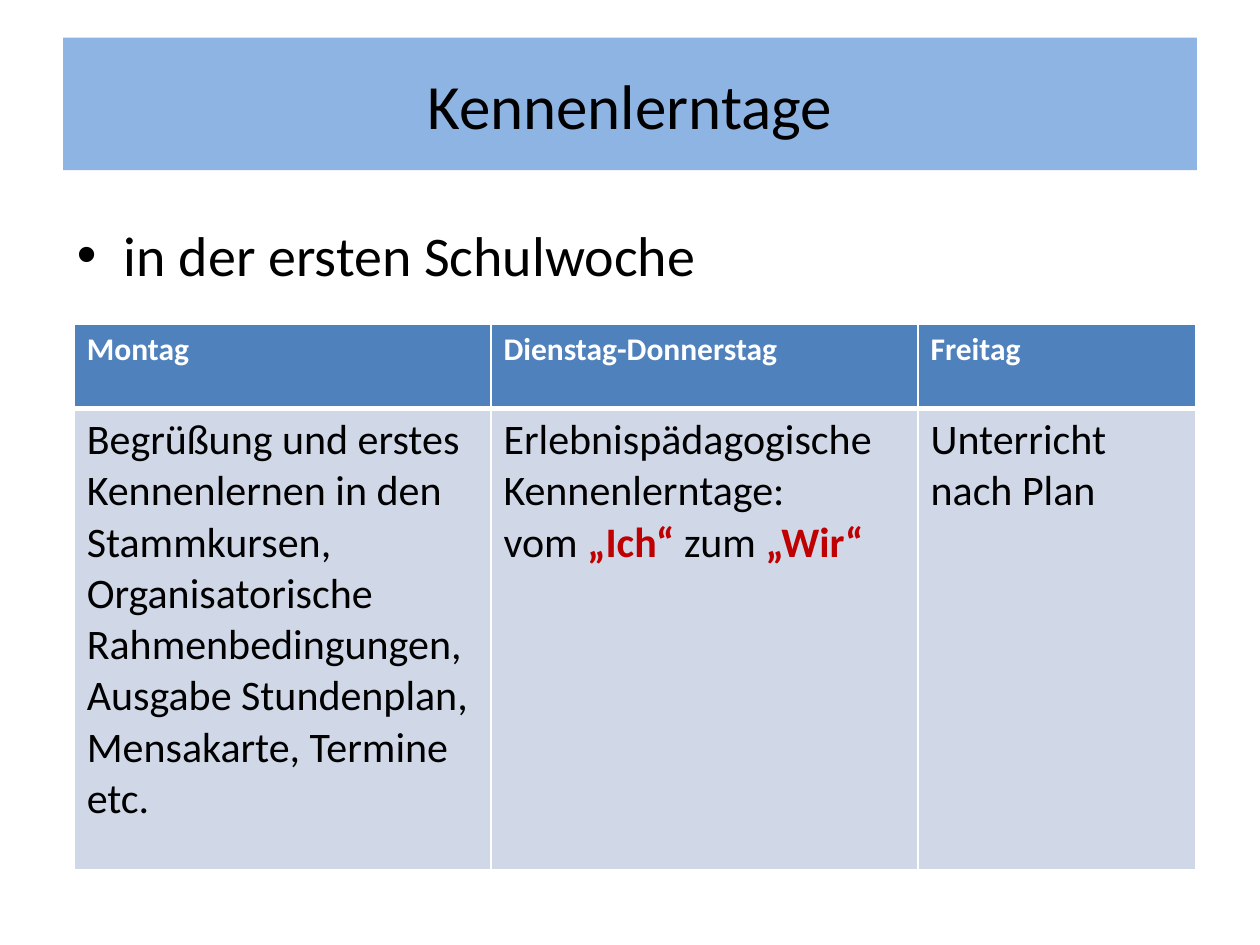
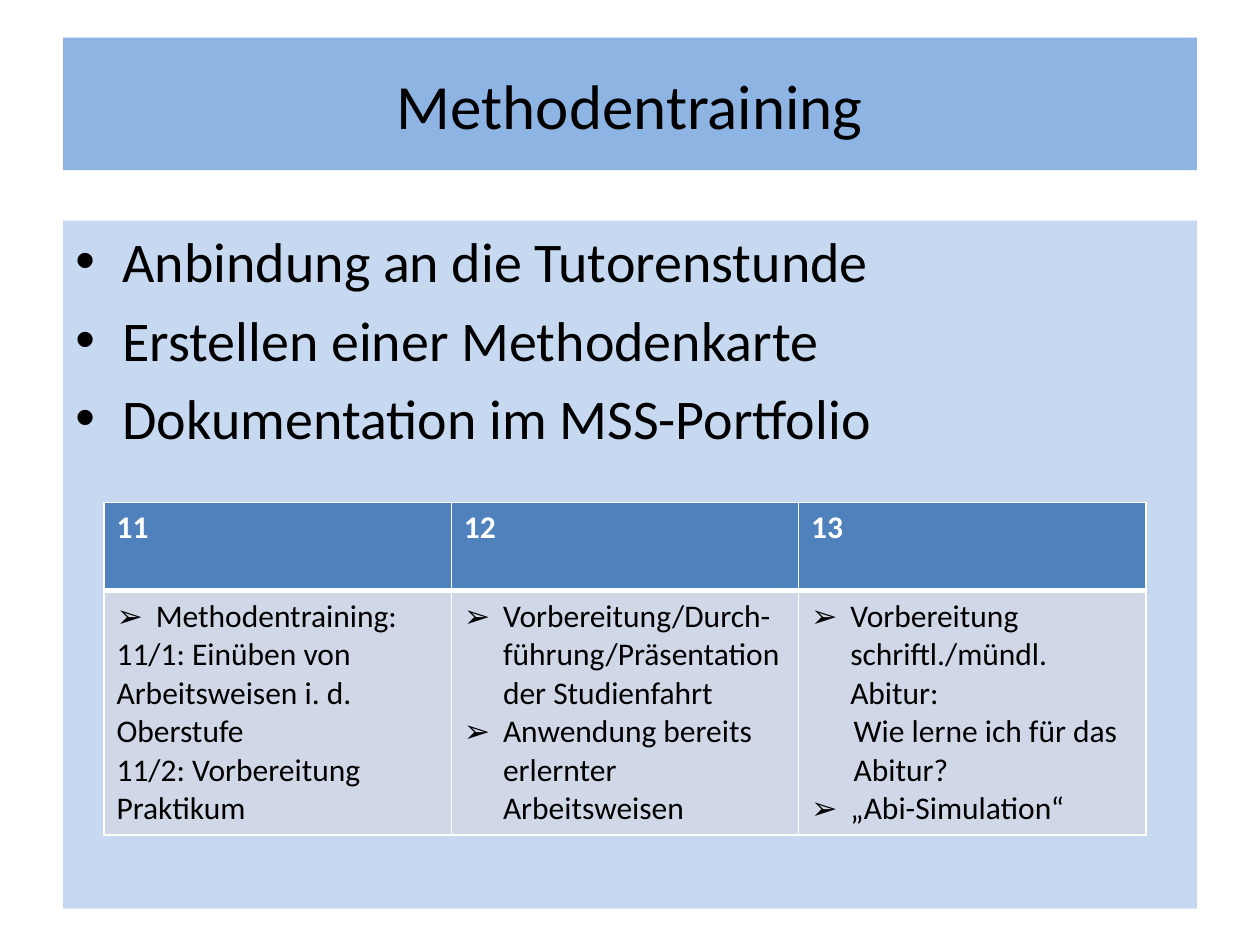
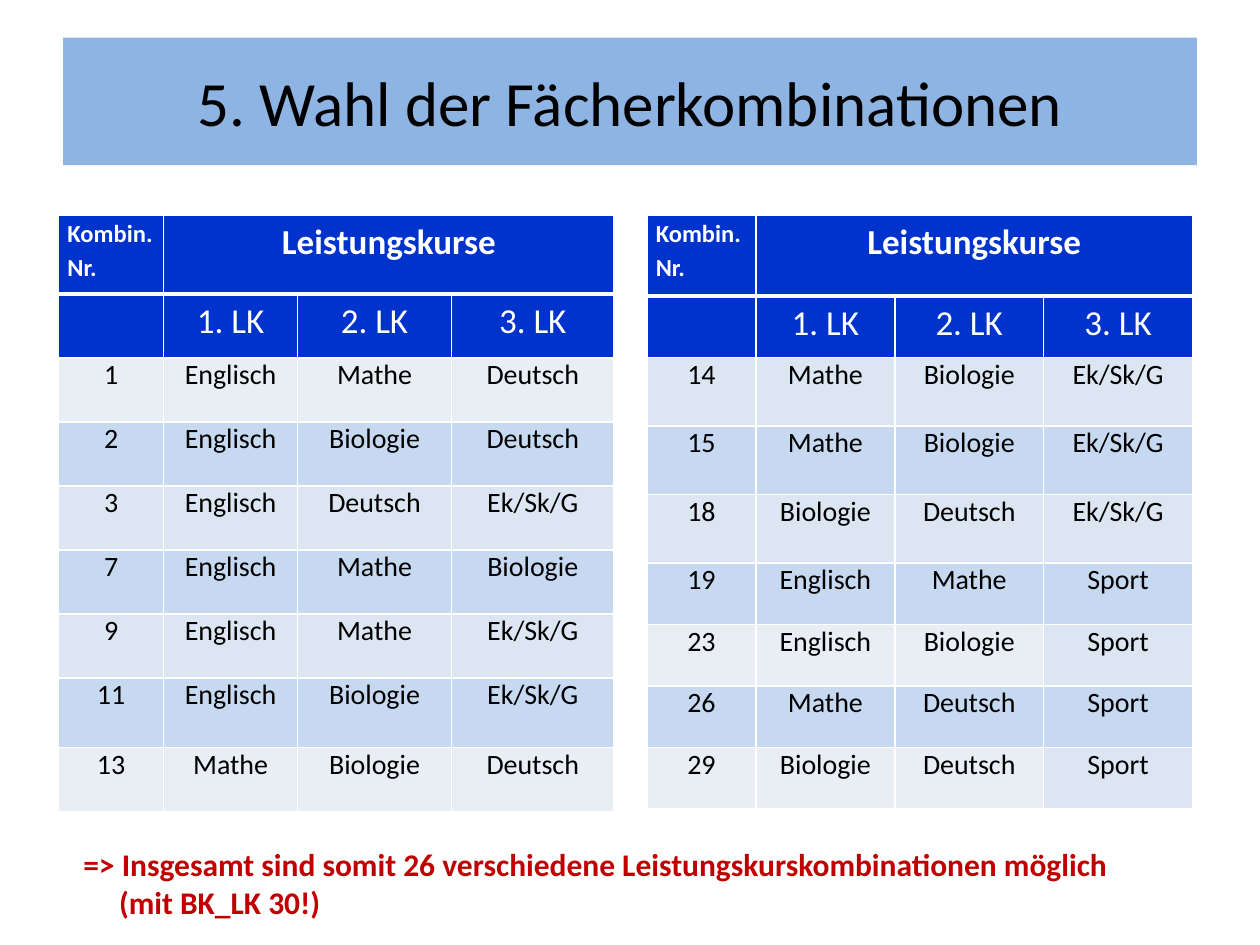
from dataclasses import dataclass

from lxml.etree import SubElement
from pptx import Presentation
from pptx.dml.color import RGBColor
from pptx.enum.text import MSO_ANCHOR, MSO_AUTO_SIZE, PP_ALIGN
from pptx.oxml.ns import qn
from pptx.util import Cm, Pt


# Theme: colours and type sizes
@dataclass(frozen=True)
class Theme:
    font: str = "Calibri"
    title_band: str = "8EB4E3"
    panel: str = "C6D9F1"
    header: str = "4F81BD"
    body_cell: str = "D0D8E8"
    course_header: str = "0033CC"
    gray: str = "E9EDF4"
    pale: str = "DCE6F2"
    white: str = "FFFFFF"
    black: str = "000000"
    accent: str = "C00000"
    title_size: float = 36
    bullet_size: float = 32
    large_size: float = 24
    course_size: float = 20
    text_size: float = 18
    entry_size: float = 16
    small_size: float = 14


THEME = Theme()


# Content types: lengths are centimetres, type sizes are points
@dataclass(frozen=True)
class Style:
    size: float
    color: str = THEME.black
    bold: bool = False
    align: PP_ALIGN = PP_ALIGN.LEFT
    line_spacing: float = 1.0
    space_before: float = 0


@dataclass(frozen=True)
class Line:
    """One paragraph; every second part between bars is accented."""
    text: str
    bullet: str = ""
    indent: float = 0


@dataclass(frozen=True)
class Cell:
    lines: list[Line]
    style: Style
    fill: str
    span: int = 1


@dataclass(frozen=True)
class Grid:
    left: float
    top: float
    columns: list[float]
    rows: list[float]
    cells: list[list[Cell]]
    margin_x: float = 0.25
    margin_y: float = 0.13


@dataclass(frozen=True)
class Combination:
    number: int
    courses: str
    fill: str
    last_fill: str = ""


BULLET_STYLE = Style(THEME.bullet_size, space_before=6.4)
HEADER_STYLE = Style(THEME.text_size, THEME.white, True)
NUMBER_STYLE = Style(THEME.small_size, THEME.white, True, line_spacing=1.15)
COURSES_STYLE = Style(THEME.course_size, THEME.white, True, PP_ALIGN.CENTER, 1.15)
COURSE_STYLE = Style(THEME.course_size, THEME.white, False, PP_ALIGN.CENTER, 1.15)
ENTRY_STYLE = Style(THEME.entry_size, align=PP_ALIGN.CENTER)
NOTE_STYLE = Style(THEME.text_size, THEME.accent, True)


# Text
def set_indent(paragraph, line: Line) -> None:
    properties = paragraph._p.get_or_add_pPr()
    properties.set("marL", str(Cm(line.indent)))
    properties.set("indent", str(-Cm(line.indent) if line.bullet else 0))
    if line.bullet:
        SubElement(properties, qn("a:buFont"), typeface="Arial")
        SubElement(properties, qn("a:buChar"), char=line.bullet)


def write_lines(text_frame, lines: list[Line], style: Style) -> None:
    for index, line in enumerate(lines):
        paragraph = text_frame.paragraphs[0] if index == 0 else text_frame.add_paragraph()
        set_indent(paragraph, line)
        paragraph.alignment = style.align
        paragraph.line_spacing = style.line_spacing
        paragraph.space_before = Pt(style.space_before)
        for position, part in enumerate(line.text.split("|")):
            accented = position % 2 == 1
            run = paragraph.add_run()
            run.text = part
            run.font.name = THEME.font
            run.font.size = Pt(style.size)
            run.font.bold = style.bold or accented
            color = THEME.accent if accented else style.color
            run.font.color.rgb = RGBColor.from_string(color)


def fill_solid(target, color: str) -> None:
    target.fill.solid()
    target.fill.fore_color.rgb = RGBColor.from_string(color)


def add_text(slide, left: float, top: float, width: float, height: float,
             lines: list[Line], style: Style, fill: str = "") -> None:
    shape = slide.shapes.add_textbox(Cm(left), Cm(top), Cm(width), Cm(height))
    shape.text_frame.word_wrap = True
    if fill:
        fill_solid(shape, fill)
    write_lines(shape.text_frame, lines, style)


def add_titled_slide(presentation, title: str, height: float = 2.67):
    slide = presentation.slides.add_slide(presentation.slide_layouts[5])
    shape = slide.shapes.title
    shape.left, shape.top, shape.width, shape.height = Cm(1.27), Cm(0.76), Cm(22.86), Cm(height)
    fill_solid(shape, THEME.title_band)
    shape.text_frame.auto_size = MSO_AUTO_SIZE.NONE
    shape.text_frame.vertical_anchor = MSO_ANCHOR.MIDDLE
    write_lines(shape.text_frame, [Line(title)], Style(THEME.title_size, align=PP_ALIGN.CENTER))
    return slide


# Tables
def set_borders(cell, top: float, bottom: float) -> None:
    properties = cell._tc.get_or_add_tcPr()
    widths = {"a:lnL": 1, "a:lnR": 1, "a:lnT": top, "a:lnB": bottom}
    for index, (tag, width) in enumerate(widths.items()):
        border = SubElement(properties, qn(tag), w=str(Pt(width)))
        solid = SubElement(border, qn("a:solidFill"))
        SubElement(solid, qn("a:srgbClr"), val=THEME.white)
        properties.insert(index, border)


def add_grid(slide, grid: Grid) -> None:
    table = slide.shapes.add_table(
        len(grid.rows), len(grid.columns), Cm(grid.left), Cm(grid.top),
        Cm(sum(grid.columns)), Cm(sum(grid.rows))).table
    table.horz_banding = False
    for column, width in zip(table.columns, grid.columns):
        column.width = Cm(width)
    for row, height in zip(table.rows, grid.rows):
        row.height = Cm(height)
    for row_index, row_cells in enumerate(grid.cells):
        column_index = 0
        for content in row_cells:
            cell = table.cell(row_index, column_index)
            last = column_index + content.span - 1
            if content.span > 1:
                cell.merge(table.cell(row_index, last))
            for index in range(column_index, last + 1):
                part = table.cell(row_index, index)
                fill_solid(part, content.fill)
                set_borders(part, 3 if row_index == 1 else 1, 3 if row_index == 0 else 1)
            cell.margin_left = cell.margin_right = Cm(grid.margin_x)
            cell.margin_top = cell.margin_bottom = Cm(grid.margin_y)
            write_lines(cell.text_frame, content.lines, content.style)
            column_index = last + 1


def plan_cells(headings: list[str], bodies: list[list[Line]], size: float) -> list[list[Cell]]:
    return [[Cell([Line(heading)], HEADER_STYLE, THEME.header) for heading in headings],
            [Cell(lines, Style(size), THEME.body_cell) for lines in bodies]]


def combination_cells(combinations: list[Combination]) -> list[list[Cell]]:
    blue = THEME.course_header
    cells = [
        [Cell([Line("Kombin."), Line("Nr.")], NUMBER_STYLE, blue),
         Cell([Line("Leistungskurse")], COURSES_STYLE, blue, span=3)],
        [Cell([], COURSE_STYLE, blue)]
        + [Cell([Line(f"{rank}. LK")], COURSE_STYLE, blue) for rank in (1, 2, 3)],
    ]
    for combination in combinations:
        texts = [str(combination.number), *combination.courses.split()]
        fills = [combination.fill] * 3 + [combination.last_fill or combination.fill]
        cells.append([Cell([Line(text)], ENTRY_STYLE, fill) for text, fill in zip(texts, fills)])
    return cells


# Slides
def bullet(text: str) -> Line:
    return Line(text, "•", 0.95)


def arrow(text: str) -> Line:
    return Line(text, "➢", 0.79)


def add_introduction_days(presentation) -> None:
    slide = add_titled_slide(presentation, "Kennenlerntage")
    add_text(slide, 1.3, 4.32, 22.86, 2.1, [bullet("in der ersten Schulwoche")], BULLET_STYLE)
    bodies = [
        [Line("Begrüßung und erstes Kennenlernen in den Stammkursen, Organisatorische "
              "Rahmenbedingungen, Ausgabe Stundenplan, Mensakarte, Termine etc.")],
        [Line("Erlebnispädagogische Kennenlerntage:"), Line("vom |„Ich“ |zum |„Wir“")],
        [Line("Unterricht nach Plan")],
    ]
    cells = plan_cells(["Montag", "Dienstag-Donnerstag", "Freitag"], bodies, THEME.large_size)
    add_grid(slide, Grid(1.5, 6.53, [8.4, 8.61, 5.59], [1.7, 9.3], cells))


def add_method_training(presentation) -> None:
    slide = add_titled_slide(presentation, "Methodentraining")
    goals = ["Anbindung an die Tutorenstunde", "Erstellen einer Methodenkarte",
             "Dokumentation im MSS-Portfolio"]
    add_text(slide, 1.27, 4.45, 22.86, 13.87, [bullet(goal) for goal in goals],
             BULLET_STYLE, THEME.panel)
    bodies = [
        [arrow("Methodentraining:"),
         Line("11/1: Einüben von Arbeitsweisen i. d. Oberstufe"),
         Line("11/2: Vorbereitung"), Line("Praktikum")],
        [arrow("Vorbereitung/Durch-führung/Präsentation der Studienfahrt"),
         arrow("Anwendung bereits erlernter Arbeitsweisen")],
        [arrow("Vorbereitung schriftl./mündl. Abitur:"),
         Line("Wie lerne ich für das", indent=0.86), Line("Abitur?", indent=0.86),
         arrow("„Abi-Simulation“")],
    ]
    cells = plan_cells(["11", "12", "13"], bodies, THEME.text_size)
    add_grid(slide, Grid(2.1, 10.13, [7.0] * 3, [1.78, 4.92], cells))


def add_course_combinations(presentation) -> None:
    slide = add_titled_slide(presentation, "5. Wahl der Fächerkombinationen", 2.57)
    gray, pale, panel = THEME.gray, THEME.pale, THEME.panel
    first = [
        Combination(1, "Englisch Mathe Deutsch", gray),
        Combination(2, "Englisch Biologie Deutsch", panel),
        Combination(3, "Englisch Deutsch Ek/Sk/G", pale),
        Combination(7, "Englisch Mathe Biologie", panel),
        Combination(9, "Englisch Mathe Ek/Sk/G", pale),
        Combination(11, "Englisch Biologie Ek/Sk/G", panel),
        Combination(13, "Mathe Biologie Deutsch", gray),
    ]
    second = [
        Combination(14, "Mathe Biologie Ek/Sk/G", pale),
        Combination(15, "Mathe Biologie Ek/Sk/G", panel),
        Combination(18, "Biologie Deutsch Ek/Sk/G", pale),
        Combination(19, "Englisch Mathe Sport", panel),
        Combination(23, "Englisch Biologie Sport", gray, pale),
        Combination(26, "Mathe Deutsch Sport", panel),
        Combination(29, "Biologie Deutsch Sport", gray, pale),
    ]
    grids = [
        Grid(1.18, 4.33, [2.12, 2.7, 3.1, 3.28], [1.6] + [1.29] * 6 + [1.4, 1.29],
             combination_cells(first), 0.18, 0),
        Grid(13.04, 4.33, [2.2, 2.8, 3.0, 3.0], [1.64, 1.24] + [1.38] * 3 + [1.24] * 4,
             combination_cells(second), 0.18, 0),
    ]
    for grid in grids:
        add_grid(slide, grid)
    note = [Line("=> Insgesamt sind somit 26 verschiedene Leistungskurskombinationen möglich",
                 indent=0.57),
            Line("(mit BK_LK 30!)", indent=1.29)]
    add_text(slide, 0.86, 16.92, 23.01, 1.8, note, NOTE_STYLE)


def main() -> None:
    presentation = Presentation()
    presentation.slide_width, presentation.slide_height = Cm(25.4), Cm(19.05)
    add_introduction_days(presentation)
    add_method_training(presentation)
    add_course_combinations(presentation)
    presentation.save("out.pptx")


if __name__ == "__main__":
    main()
